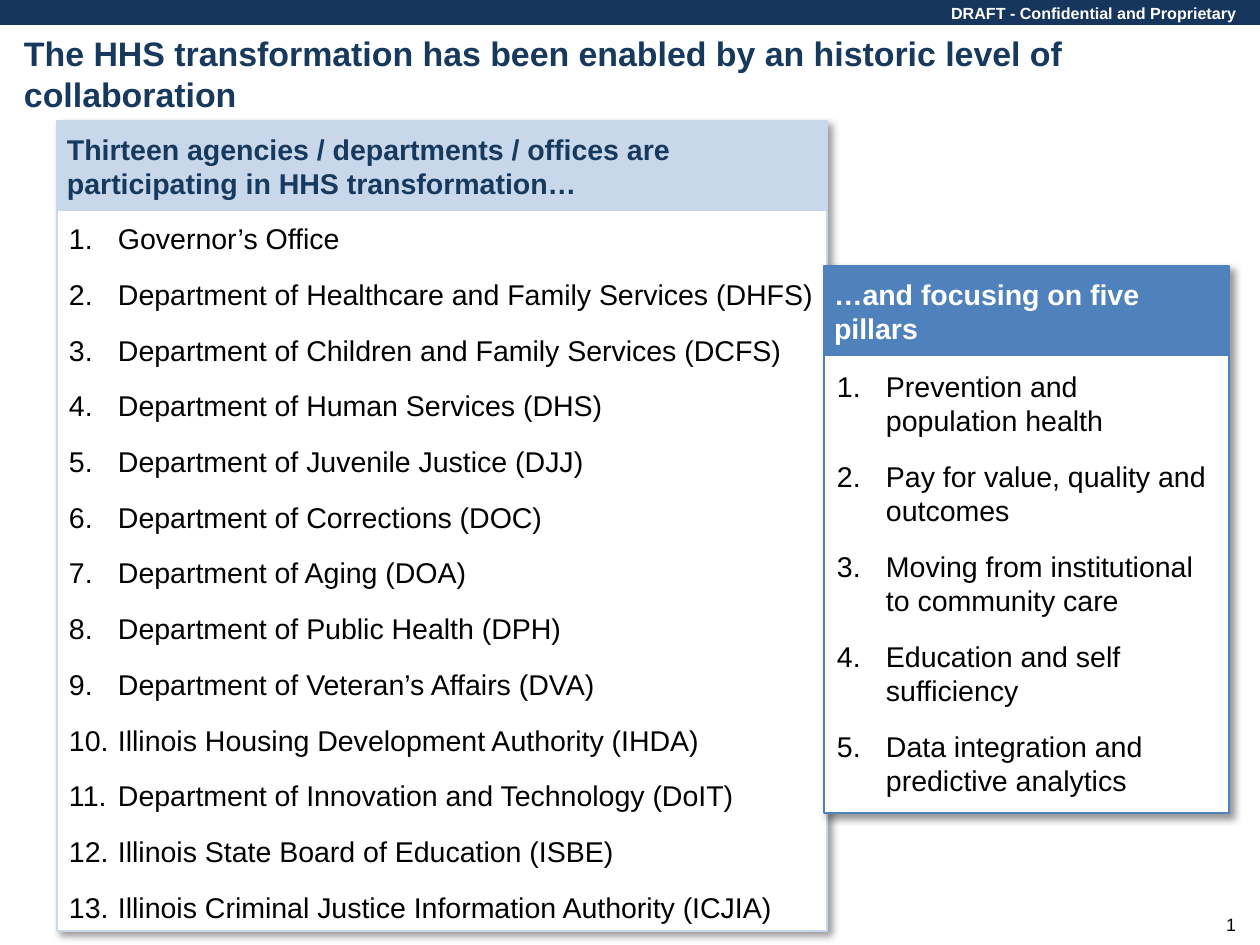
from lxml import etree
from pptx import Presentation, util as u
from pptx.dml.color import RGBColor
from pptx.enum import shapes, text
from pptx.oxml import parse_xml
from pptx.oxml.ns import nsdecls, qn

PX = 7112  # EMU per px
FONT = "Arial"
NAVY = RGBColor(0x17, 0x36, 0x5D)
TITLE_NAVY = RGBColor(0x17, 0x39, 0x5D)
PALE_BLUE = RGBColor(0xC8, 0xD8, 0xEA)
BLUE = RGBColor(0x4F, 0x81, 0xBD)
WHITE = RGBColor(0xFF, 0xFF, 0xFF)
BLACK = RGBColor(0, 0, 0)

SLIDE_SIZE = (1260, 945)
BANNER_BOX = (0, 0, 1260, 25)
MARKING = "DRAFT - Confidential and Proprietary"
MARKING_BOX = (949, 3, 287, 20)
NUMBER_BOX = (1214, 913, 22, 22)
TITLE = "The HHS transformation has been enabled by an historic level of collaboration"
TITLE_BOX = (24, 33, 1213, 82)
HEADER_HEIGHT = 90
HEADER_INSET = 10
LIST_INDENT = 49

PANELS = [
    {
        "header": "Thirteen agencies / departments / offices are participating in HHS transformation…",
        "box": (57, 121, 770, 810),
        "list_box": (69, 221, 757, 710),
        "color": PALE_BLUE,
        "header_color": TITLE_NAVY,
        "items": [
            "Governor’s Office",
            "Department of Healthcare and Family Services (DHFS)",
            "Department of Children and Family Services (DCFS)",
            "Department of Human Services (DHS)",
            "Department of Juvenile Justice (DJJ)",
            "Department of Corrections (DOC)",
            "Department of Aging (DOA)",
            "Department of Public Health (DPH)",
            "Department of Veteran’s Affairs (DVA)",
            "Illinois Housing Development Authority (IHDA)",
            "Department of Innovation and Technology (DoIT)",
            "Illinois State Board of Education (ISBE)",
            "Illinois Criminal Justice Information Authority (ICJIA)",
        ],
    },
    {
        "header": "…and focusing on five pillars",
        "box": (824, 266, 405, 547),
        "list_box": (837, 369, 377, 433),
        "color": BLUE,
        "header_color": WHITE,
        "items": [
            "Prevention and population health",
            "Pay for value, quality and outcomes",
            "Moving from institutional to community care",
            "Education and self sufficiency",
            "Data integration and predictive analytics",
        ],
    },
]


def emu(box):
    return [value * PX for value in box]


def place(shape, box):
    shape.left, shape.top, shape.width, shape.height = emu(box)


def set_frame(shape, anchor, inset=0):
    frame = shape.text_frame
    frame.word_wrap = True
    frame.auto_size = text.MSO_AUTO_SIZE.NONE
    frame.vertical_anchor = anchor
    frame.margin_left = frame.margin_right = inset * PX
    frame.margin_top = frame.margin_bottom = inset * PX
    return frame


def style(paragraph, size, color, bold=False, align=text.PP_ALIGN.LEFT):
    paragraph.alignment = align
    font = paragraph.font
    font.name, font.size, font.bold = FONT, u.Pt(size), bold
    font.color.rgb = color


def add_rectangle(slide, box, fill):
    shape = slide.shapes.add_shape(shapes.MSO_SHAPE.RECTANGLE, *emu(box))
    shape.shadow.inherit = False
    shape.fill.solid()
    shape.fill.fore_color.rgb = fill
    shape.line.fill.background()
    return shape


def add_drop_shadow(shape):
    effects = shape._element.spPr.find(qn("a:effectLst"))
    effects.append(parse_xml(
        f'<a:outerShdw {nsdecls("a")} blurRad="{u.Pt(4)}" dist="{u.Pt(3)}" dir="2700000" '
        'algn="tl" rotWithShape="0"><a:srgbClr val="000000"><a:alpha val="40000"/>'
        '</a:srgbClr></a:outerShdw>'))


def add_right_text(slide, box, content, size, color):
    frame = set_frame(slide.shapes.add_textbox(*emu(box)), text.MSO_ANCHOR.MIDDLE)
    paragraph = frame.paragraphs[0]
    paragraph.text = content
    style(paragraph, size, color, color == WHITE, text.PP_ALIGN.RIGHT)


def fill_list(placeholder, box, items):
    place(placeholder, box)
    frame = set_frame(placeholder, text.MSO_ANCHOR.TOP)
    frame.text = "\n".join(items)
    for index, paragraph in enumerate(frame.paragraphs):
        properties = paragraph._p.get_or_add_pPr()
        properties.set("marL", str(LIST_INDENT * PX))
        properties.set("indent", str(-LIST_INDENT * PX))
        etree.SubElement(properties, qn("a:buFont"), typeface="+mj-lt")
        etree.SubElement(properties, qn("a:buAutoNum"), type="arabicPeriod")
        paragraph.space_before = u.Pt(6 if index else 0)
        paragraph.space_after = u.Pt(6)
        style(paragraph, 16, BLACK)


def add_panel(slide, panel, placeholder):
    left, top, width, _ = panel["box"]
    body = add_rectangle(slide, panel["box"], WHITE)
    body.line.color.rgb = panel["color"]
    body.line.width = u.Pt(1.5)
    add_drop_shadow(body)

    header = add_rectangle(slide, (left, top, width, HEADER_HEIGHT), panel["color"])
    frame = set_frame(header, text.MSO_ANCHOR.MIDDLE, HEADER_INSET)
    frame.text = panel["header"]
    style(frame.paragraphs[0], 16, panel["header_color"], True)

    fill_list(placeholder, panel["list_box"], panel["items"])
    slide.shapes._spTree.append(placeholder._element)  # bring the list above its panel


def main():
    presentation = Presentation()
    presentation.slide_width, presentation.slide_height = emu(SLIDE_SIZE)
    slide = presentation.slides.add_slide(presentation.slide_layouts.get_by_name("Two Content"))
    title, *lists = slide.placeholders

    add_rectangle(slide, BANNER_BOX, NAVY)
    add_right_text(slide, NUMBER_BOX, "1", 10, BLACK)
    add_right_text(slide, MARKING_BOX, MARKING, 9, WHITE)

    place(title, TITLE_BOX)
    frame = set_frame(title, text.MSO_ANCHOR.TOP)
    frame.text = TITLE
    style(frame.paragraphs[0], 19, TITLE_NAVY, True)

    for panel, placeholder in zip(PANELS, lists):
        add_panel(slide, panel, placeholder)
    presentation.save("out.pptx")


if __name__ == "__main__":
    main()
